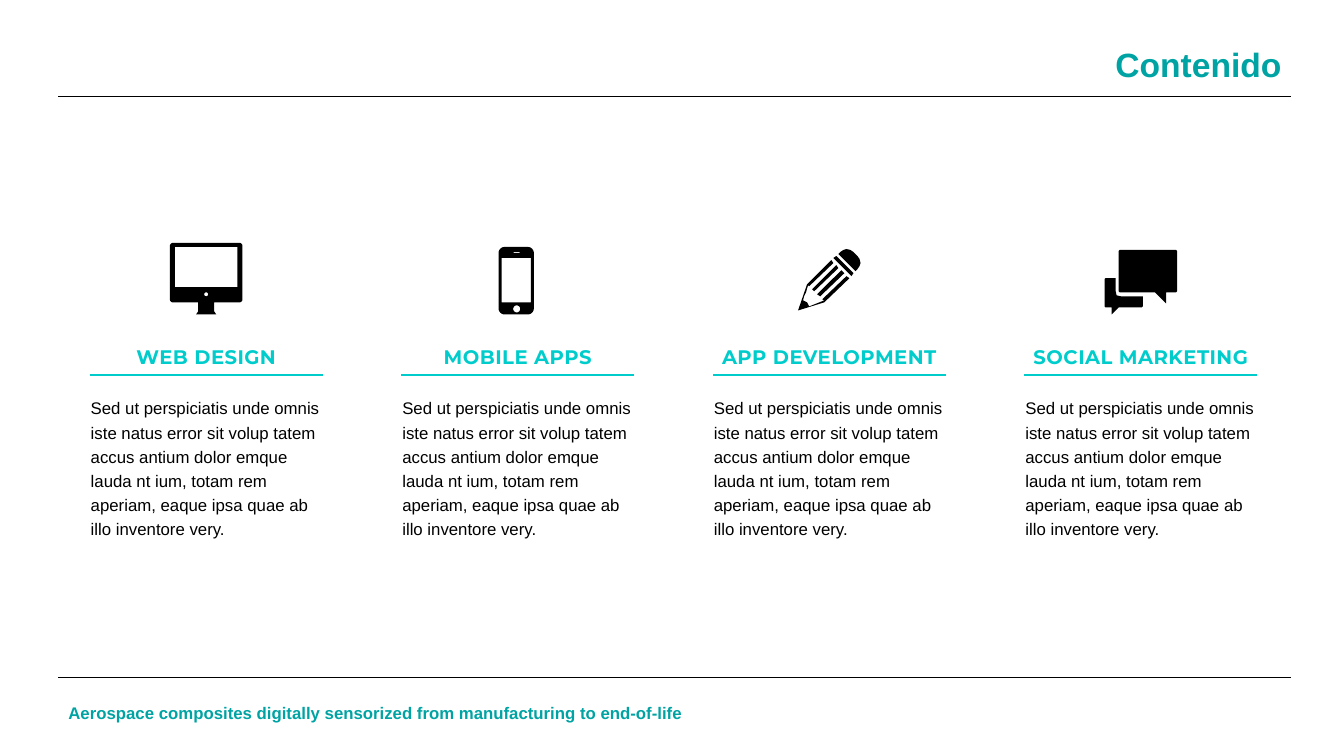
from dataclasses import dataclass
from math import cos, pi, sin

from pptx import Presentation
from pptx.dml.color import RGBColor
from pptx.enum.shapes import MSO_CONNECTOR
from pptx.enum.text import MSO_ANCHOR, MSO_AUTO_SIZE, PP_ALIGN
from pptx.oxml.ns import qn
from pptx.util import Inches, Pt

STRAIGHT = MSO_CONNECTOR.STRAIGHT
TOP = MSO_ANCHOR.TOP
NO_FIT = MSO_AUTO_SIZE.NONE
LEFT, CENTER, RIGHT = PP_ALIGN.LEFT, PP_ALIGN.CENTER, PP_ALIGN.RIGHT


@dataclass(frozen=True)
class Theme:
    teal: RGBColor = RGBColor(0x00, 0xA3, 0xA3)
    aqua: RGBColor = RGBColor(0x00, 0xCC, 0xCC)
    black: RGBColor = RGBColor(0, 0, 0)
    font: str = "Arial"
    heading_font: str = "Montserrat"
    title: int = 24
    heading: int = 14
    body: int = 12


THEME = Theme()
SLIDE_W, SLIDE_H = 13.33, 7.5
MARGIN_L, MARGIN_R = 0.58, 12.8
COLUMN_X, COLUMN_Y, COLUMN_W, COLUMN_STEP = 0.89, 2.41, 2.31, 3.09
ICON_SIZE = 0.72

TITLE = "Contenido"
FOOTER = "Aerospace composites digitally sensorized from manufacturing to end-of-life"
BODY = ("Sed ut perspiciatis unde omnis iste natus error sit volup tatem accus antium "
        "dolor emque lauda nt ium, totam rem aperiam, eaque ipsa quae ab illo inventore very.")


# Outline helpers, in hundredths of an inch within the icon box
def arc(cx, cy, r, start=0, sweep=360, steps=24):
    angles = [(start + sweep * i / steps) * pi / 180 for i in range(steps + 1)]
    return [(cx + r * cos(a), cy + r * sin(a)) for a in angles]


def rect(x, y, w, h):
    return [(x, y), (x + w, y), (x + w, y + h), (x, y + h)]


def rounded(x, y, w, h, r):
    corners = rect(x + r, y + r, w - 2 * r, h - 2 * r)
    return [pt for i, (cx, cy) in enumerate(corners)
            for pt in arc(cx, cy, r, 180 + 90 * i, 90, 6)]


MONITOR = [
    rounded(0, 0, 72, 59, 3),
    rect(5, 4, 62, 40),
    arc(36, 51, 2),
    [(28, 59), (44, 59), (44, 68), (46, 71), (26, 71), (28, 68)],
]
PHONE = [
    rounded(17, 4, 35, 67, 6),
    rect(20, 15, 29, 44),
    arc(35, 65.5, 3.5),
    rect(32, 9, 6, 1),
]
PENCIL = [
    [(5, 67), (14, 41), (38, 17), (40, 20), (16, 43), (15, 42), (14, 45), (13, 49),
     (11, 53), (10, 57), (14, 59), (16, 63), (31, 57), (29, 56), (53, 33), (56, 35),
     (31, 59)],
    [(19, 46), (43, 22), (45, 25), (21, 48)],
    [(24, 51), (48, 27), (51, 30), (27, 53)],
    [(40, 15), (43, 13), (60, 30), (58, 33)],
    [(45, 11), (47, 9), (50, 7), (53, 6), (57, 7), (60, 9), (64, 13), (66, 16),
     (67, 20), (66, 23), (64, 26), (62, 28)],
]
CHAT = [
    [(0, 36), (1, 35), (11, 35), (11, 48), (12, 52), (16, 53), (38, 53), (38, 63),
     (37, 64), (14, 64), (7, 71), (7, 64), (1, 64), (0, 63)],
    [(14, 8), (15, 7), (71, 7), (72, 8), (72, 48), (71, 49), (61, 49), (61, 60),
     (50, 49), (15, 49), (14, 48)],
]
SERVICES = [("WEB DESIGN", MONITOR), ("MOBILE APPS", PHONE),
            ("APP DEVELOPMENT", PENCIL), ("SOCIAL MARKETING", CHAT)]


def place(sp, x, y, w, h):
    sp.left, sp.top, sp.width, sp.height = (Inches(v) for v in (x, y, w, h))


def write(tf, text, size, color, font=THEME.font, bold=False, align=LEFT):
    tf.word_wrap, tf.auto_size, tf.vertical_anchor = True, NO_FIT, TOP
    p = tf.paragraphs[0]
    p.alignment = align
    r = p.add_run()
    r.text = text
    r.font.size, r.font.name, r.font.bold = Pt(size), font, bold
    r.font.color.rgb = color
    return p, r


def add_text(s, box, text, size, color, inset=True, **style):
    sp = s.shapes.add_textbox(*(Inches(v) for v in box))
    tf = sp.text_frame
    if not inset:
        tf.margin_left = tf.margin_right = tf.margin_top = tf.margin_bottom = 0
    return write(tf, text, size, color, **style)


def add_rule(s, x1, x2, y, color, weight):
    line = s.shapes.add_connector(STRAIGHT, Inches(x1), Inches(y), Inches(x2), Inches(y))
    line.line.color.rgb, line.line.width = color, Pt(weight)
    sppr = line._element.spPr
    sppr.append(sppr.makeelement(qn("a:effectLst"), {}))


def add_icon(s, x, y, outlines):
    # Ten drawing units to a hundredth of an inch
    builder = None
    for outline in outlines:
        (x0, y0), *rest = [(px * 10, py * 10) for px, py in outline]
        if builder is None:
            builder = s.shapes.build_freeform(x0, y0, scale=Inches(1) / 1000)
        else:
            builder.move_to(x0, y0)
        builder.add_line_segments(rest, close=True)
    sp = builder.convert_to_shape(Inches(x), Inches(y))
    sp.shadow.inherit = False
    sp.fill.solid()
    sp.fill.fore_color.rgb = THEME.black
    sp.line.fill.background()


def add_header(s, x1, x2, y):
    title = s.shapes.title
    place(title, x2 - 3.57, y - 0.57, 3.58, 0.5)
    write(title.text_frame, TITLE, THEME.title, THEME.teal, bold=True, align=RIGHT)
    add_rule(s, x1, x2, y, THEME.black, 0.5)


def add_footer(s, x1, x2, y):
    add_rule(s, x1, x2, y, THEME.black, 0.5)
    add_text(s, (x1, y + 0.2, 6.42, 0.3), FOOTER, THEME.body, THEME.teal, bold=True)


def add_service(s, x, y, w, heading, icon):
    add_icon(s, x + (w - ICON_SIZE) / 2, y, icon)
    # Heading with its underline
    p, r = add_text(s, (x, y + 0.93, w, 0.29), heading, THEME.heading, THEME.aqua,
                    inset=False, font=THEME.heading_font, bold=True, align=CENTER)
    p.line_spacing, p.space_after = Pt(22.7), Pt(8)
    r._r.get_or_add_rPr().set("spc", "30")
    add_rule(s, x, x + w, y + 1.31, THEME.aqua, 1)
    # Description
    p, r = add_text(s, (x + 0.01, y + 1.5, w, 1.41), BODY, THEME.body, THEME.black,
                    inset=False)
    p.line_spacing, p.space_after = Pt(17.3), Pt(8)


def main():
    prs = Presentation()
    prs.slide_width, prs.slide_height = Inches(SLIDE_W), Inches(SLIDE_H)
    s = prs.slides.add_slide(prs.slide_layouts[5])
    add_header(s, MARGIN_L, MARGIN_R, 0.96)
    for i, (heading, icon) in enumerate(SERVICES):
        add_service(s, COLUMN_X + i * COLUMN_STEP, COLUMN_Y, COLUMN_W, heading, icon)
    add_footer(s, MARGIN_L, MARGIN_R, 6.72)
    prs.save("out.pptx")


if __name__ == "__main__":
    main()
